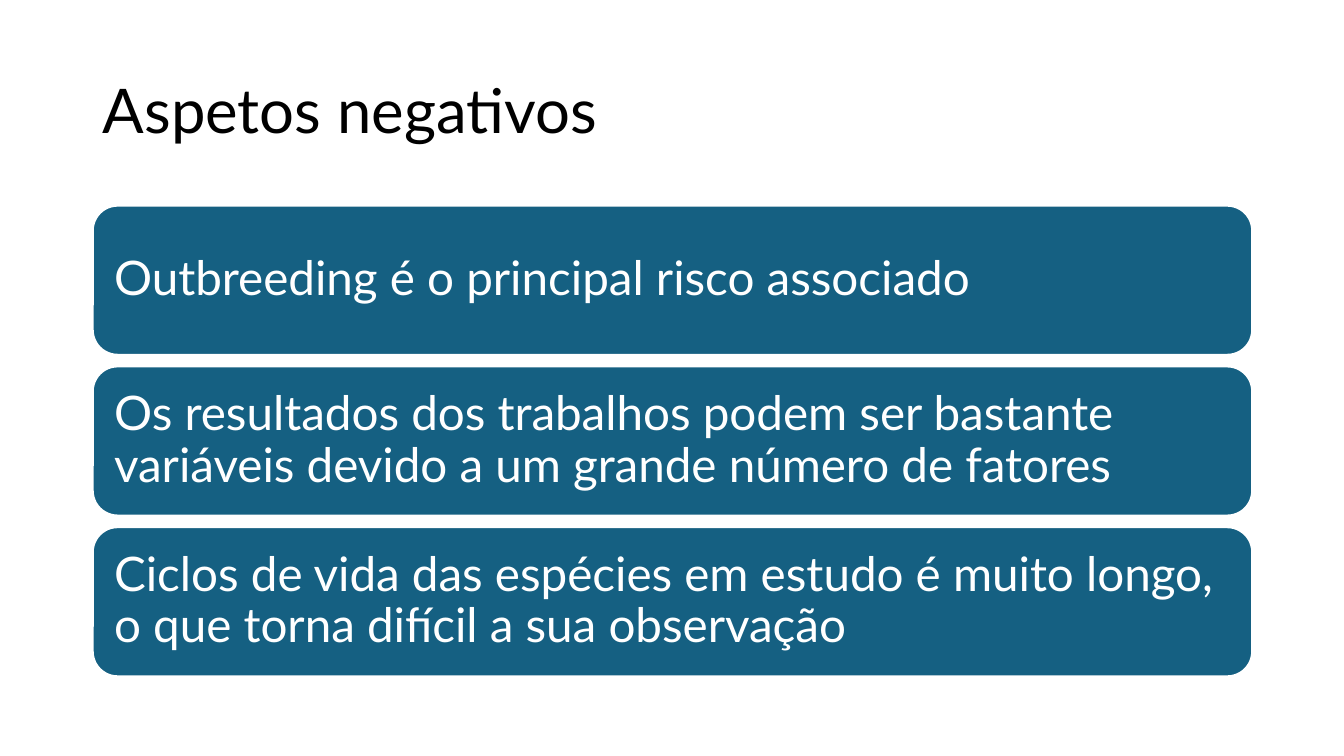
from typing import NamedTuple

from pptx import Presentation
from pptx.dml.color import RGBColor
from pptx.enum.shapes import MSO_SHAPE
from pptx.enum.text import MSO_ANCHOR, PP_ALIGN
from pptx.slide import Slide
from pptx.text.text import TextFrame
from pptx.util import Inches, Pt

BLACK = RGBColor(0x00, 0x00, 0x00)
WHITE = RGBColor(0xFF, 0xFF, 0xFF)
TEAL = RGBColor(0x15, 0x60, 0x82)
FONT = "Lato"

LEFT, WIDTH = 0.92, 11.5
CARD_HEIGHT = 1.48
FIRST_TOP, LAST_TOP = 2.04, 5.23


class Card(NamedTuple):
    text: str
    top: float


DRAWBACKS = [
    "Outbreeding é o principal risco associado",
    "Os resultados dos trabalhos podem ser bastante variáveis "
    "devido a um grande número de fatores",
    "Ciclos de vida das espécies em estudo é muito longo, "
    "o que torna difícil a sua observação",
]
PITCH = (LAST_TOP - FIRST_TOP) / (len(DRAWBACKS) - 1)
CARDS = [Card(text, FIRST_TOP + i * PITCH) for i, text in enumerate(DRAWBACKS)]


def set_text(tf: TextFrame, text: str, size: float, color: RGBColor) -> None:
    """Fill the frame with one left-aligned, vertically centred paragraph."""
    tf.word_wrap = True
    tf.vertical_anchor = MSO_ANCHOR.MIDDLE
    p = tf.paragraphs[0]
    p.text = text
    p.alignment = PP_ALIGN.LEFT
    p.line_spacing = 0.9
    p.font.name = FONT
    p.font.size = Pt(size)
    p.font.color.rgb = color


def add_title(s: Slide, text: str) -> None:
    sp = s.shapes.add_textbox(Inches(LEFT), Inches(0.4), Inches(WIDTH), Inches(1.45))
    set_text(sp.text_frame, text, 44, BLACK)


def add_card(s: Slide, card: Card) -> None:
    sp = s.shapes.add_shape(MSO_SHAPE.ROUNDED_RECTANGLE, Inches(LEFT), Inches(card.top),
                            Inches(WIDTH), Inches(CARD_HEIGHT))
    sp.shadow.inherit = False
    sp.fill.solid()
    sp.fill.fore_color.rgb = TEAL
    sp.line.color.rgb = WHITE
    sp.line.width = Pt(1.5)
    tf = sp.text_frame
    tf.margin_left = tf.margin_right = Inches(0.14)
    tf.margin_top = tf.margin_bottom = Inches(0.14)
    set_text(tf, card.text, 34, WHITE)


def main() -> None:
    prs = Presentation()
    prs.slide_width, prs.slide_height = Inches(13.33), Inches(7.5)
    s = prs.slides.add_slide(prs.slide_layouts[6])
    add_title(s, "Aspetos negativos")
    for card in CARDS:
        add_card(s, card)
    prs.save("out.pptx")


if __name__ == "__main__":
    main()
